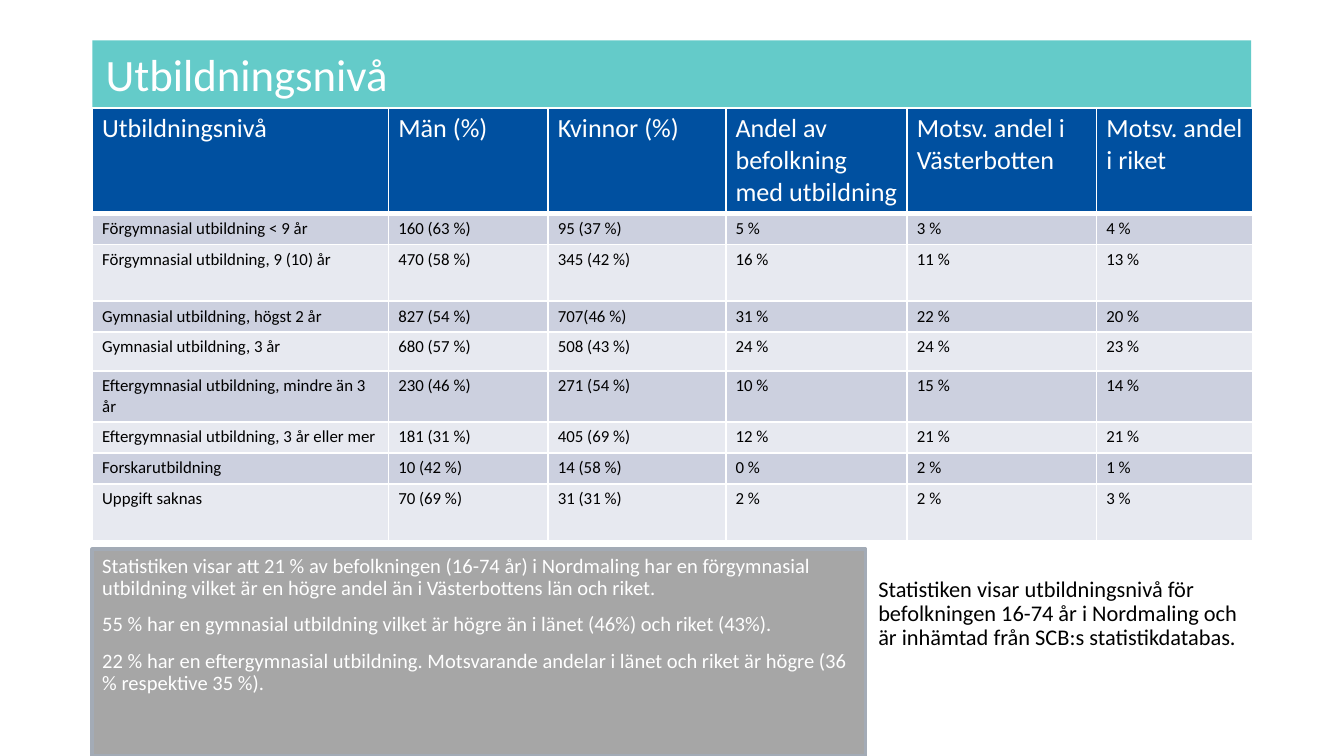
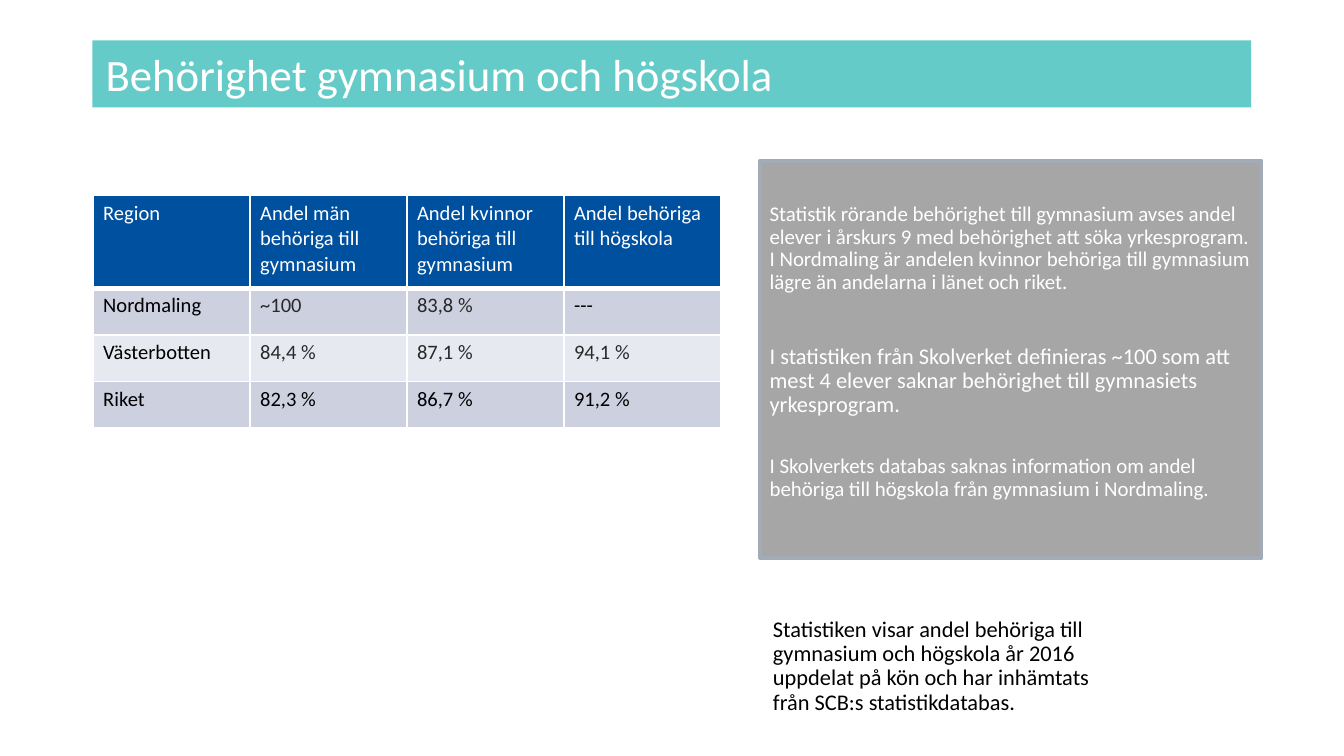
from lxml import etree
from pptx import Presentation
from pptx.dml.color import RGBColor
from pptx.enum import shapes, text
from pptx.oxml import ns
from pptx.util import Pt

HUES = {
    "teal": "64CBC9", "blue": "0050A0", "band": "CCD0DF", "pale": "E7E9F0",
    "grey": "A6A6A6", "edge": "A3ABB6", "white": "FFFFFF", "black": "000000",
    "dark": "292929",
}
FONT = "Calibri"
LEFT, WIDE = 49.5, 620.8


def style(par, size, hue):
    par.font.name = FONT
    par.font.size = Pt(size)
    par.font.bold = False
    par.font.color.rgb = RGBColor.from_string(HUES[hue])


def add_box(slide, place, paras, hue, fill=None, edge=None, inset=(7.2, 3.6),
            anchor=text.MSO_ANCHOR.TOP, ratio=0.9):
    place = [Pt(n) for n in place]
    if fill:
        box = slide.shapes.add_shape(shapes.MSO_SHAPE.RECTANGLE, *place)
        box.shadow.inherit = False
        box.fill.solid()
        box.fill.fore_color.rgb = RGBColor.from_string(HUES[fill])
        if edge:
            box.line.color.rgb = RGBColor.from_string(HUES[edge])
            box.line.width = Pt(2)
        else:
            box.line.fill.background()
    else:
        box = slide.shapes.add_textbox(*place)
    frame = box.text_frame
    frame.word_wrap = True
    frame.vertical_anchor = anchor
    frame.margin_left = frame.margin_right = Pt(inset[0])
    frame.margin_top, frame.margin_bottom = Pt(inset[1]), Pt(3.6)
    for i, (words, size, gap) in enumerate(paras):
        par = frame.add_paragraph() if i else frame.paragraphs[0]
        par.text = words
        par.alignment = text.PP_ALIGN.LEFT
        par.line_spacing = ratio
        par.space_before = Pt(gap)
        style(par, size, hue)


pages = [
    {
        "title": "Utbildningsnivå",
        "spot": (LEFT, 57.8),
        "cols": [158.6, 85.5, 95.2, 97.2, 101.5, 83.7],
        "tall": [54, 16.6, 30.4, 16.6, 20.8, 27.4, 16.6, 16.6, 30.4],
        "sizes": (14, 9),
        "dark": [],
        "rows": [
            ["Utbildningsnivå", "Män (%)", "Kvinnor (%)",
             "Andel av befolkning med utbildning",
             "Motsv. andel i Västerbotten", "Motsv. andel i riket"],
            ["Förgymnasial utbildning < 9 år", "160 (63 %)", "95 (37 %)", "5 %", "3 %", "4 %"],
            ["Förgymnasial utbildning, 9 (10) år", "470 (58 %)", "345 (42 %)", "16 %", "11 %", "13 %"],
            ["Gymnasial utbildning, högst 2 år", "827 (54 %)", "707(46 %)", "31 %", "22 %", "20 %"],
            ["Gymnasial utbildning, 3 år", "680 (57 %)", "508 (43 %)", "24 %", "24 %", "23 %"],
            ["Eftergymnasial utbildning, mindre än 3 år", "230 (46 %)", "271 (54 %)", "10 %", "15 %", "14 %"],
            ["Eftergymnasial utbildning, 3 år eller mer", "181 (31 %)", "405 (69 %)", "12 %", "21 %", "21 %"],
            ["Forskarutbildning", "10 (42 %)", "14 (58 %)", "0 %", "2 %", "1 %"],
            ["Uppgift saknas", "70 (69 %)", "31 (31 %)", "2 %", "2 %", "3 %"],
        ],
        "panel": (LEFT, 294.2, 414.2, 110.8),
        "top": 3.6,
        "facts": [
            ("Statistiken visar att 21 % av befolkningen (16-74 år) i Nordmaling har en förgymnasial "
             "utbildning vilket är en högre andel än i Västerbottens län och riket.", 11, 0),
            ("55 % har en gymnasial utbildning vilket är högre än i länet (46%) och riket (43%).", 11, 7.5),
            ("22 % har en eftergymnasial utbildning. Motsvarande andelar i länet och riket är högre "
             "(36 % respektive 35 %).", 11, 7.5),
        ],
        "side": (463.4, 306, 207.4, 77.8),
        "note": "Statistiken visar utbildningsnivå för befolkningen 16-74 år i Nordmaling och "
                "är inhämtad från SCB:s statistikdatabas.",
    },
    {
        "title": "Behörighet gymnasium och högskola",
        "spot": (50, 104.8),
        "cols": [84.1] * 4,
        "tall": [49.6, 25, 25, 25],
        "sizes": (11, 11),
        "dark": [(1, 1), (1, 2), (2, 1), (2, 2), (2, 3)],
        "rows": [
            ["Region", "Andel män behöriga till gymnasium",
             "Andel kvinnor behöriga till gymnasium", "Andel behöriga till högskola"],
            ["Nordmaling", "~100", "83,8 %", "---"],
            ["Västerbotten", "84,4 %", "87,1 %", "94,1 %"],
            ["Riket", "82,3 %", "86,7 %", "91,2 %"],
        ],
        "panel": (407, 86.2, 268.8, 212.6),
        "top": 22.8,
        "facts": [
            ("Statistik rörande behörighet till gymnasium avses andel elever i årskurs 9 med behörighet "
             "att söka yrkesprogram. I Nordmaling är andelen kvinnor behöriga till gymnasium lägre än "
             "andelarna i länet och riket.", 11.2, 0),
            ("I statistiken från Skolverket definieras ~100 som att mest 4 elever saknar behörighet "
             "till gymnasiets yrkesprogram.", 12, 27.3),
            ("I Skolverkets databas saknas information om andel behöriga till högskola från gymnasium "
             "i Nordmaling.", 11.2, 20.7),
        ],
        "side": (407, 327.6, 190.8, 69.2),
        "note": "Statistiken visar andel behöriga till gymnasium och högskola år 2016 uppdelat på kön "
                "och har inhämtats från SCB:s statistikdatabas.",
    },
]

deck = Presentation()
deck.slide_width, deck.slide_height = Pt(720), Pt(405)

for page in pages:
    slide = deck.slides.add_slide(deck.slide_layouts[6])
    add_box(slide, (LEFT, 21.6, WIDE, 36), [(page["title"], 24, 0)], "white",
            fill="teal", anchor=text.MSO_ANCHOR.MIDDLE, ratio=1)

    rows, cols, tall = page["rows"], page["cols"], page["tall"]
    size = [Pt(n) for n in (*page["spot"], sum(cols), sum(tall))]
    grid = slide.shapes.add_table(len(rows), len(cols), *size).table
    for col, wide in zip(grid.columns, cols):
        col.width = Pt(wide)
    for r, row in enumerate(rows):
        grid.rows[r].height = Pt(tall[r])
        for c, words in enumerate(row):
            cell = grid.cell(r, c)
            cell.text = words
            cell.margin_left = cell.margin_right = Pt(5.3)
            cell.margin_top = cell.margin_bottom = Pt(2.7)
            hue = "white" if r == 0 else "dark" if (r, c) in page["dark"] else "black"
            style(cell.text_frame.paragraphs[0], page["sizes"][min(r, 1)], hue)
            cell.fill.solid()
            shade = "blue" if r == 0 else "band" if r % 2 else "pale"
            cell.fill.fore_color.rgb = RGBColor.from_string(HUES[shade])
            props = cell._tc.get_or_add_tcPr()
            for i, tag in enumerate(("a:lnL", "a:lnR", "a:lnT", "a:lnB")):
                line = etree.Element(ns.qn(tag), w=str(Pt(3 if r == 0 and tag == "a:lnB" else 1)))
                solid = etree.SubElement(line, ns.qn("a:solidFill"))
                etree.SubElement(solid, ns.qn("a:srgbClr"), val=HUES["white"])
                props.insert(i, line)

    add_box(slide, page["panel"], page["facts"], "white", fill="grey", edge="edge",
            inset=(5.3, page["top"]))
    add_box(slide, page["side"], [(page["note"], 12, 0)], "black")

deck.save("out.pptx")
